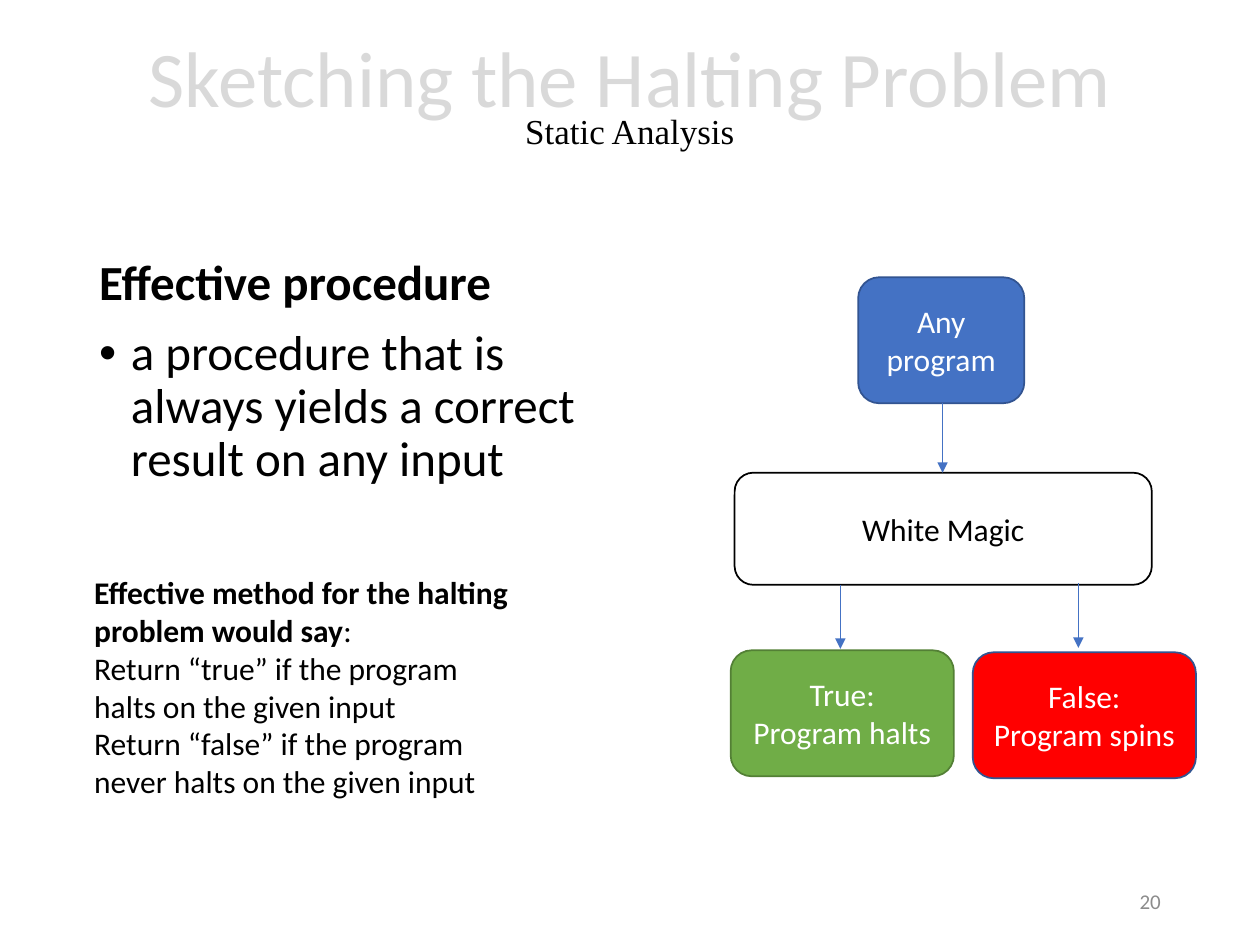
from dataclasses import dataclass

from lxml import etree
from pptx import Presentation
from pptx import util as u
from pptx.dml.color import RGBColor
from pptx.enum import shapes, text
from pptx.oxml import ns

BLACK = RGBColor(0x00, 0x00, 0x00)
WHITE = RGBColor(0xFF, 0xFF, 0xFF)
PALE_GREY = RGBColor(0xD9, 0xD9, 0xD9)
GREY = RGBColor(0x8C, 0x8C, 0x8C)
BLUE = RGBColor(0x44, 0x72, 0xC4)
DARK_BLUE = RGBColor(0x32, 0x54, 0x91)
GREEN = RGBColor(0x70, 0xAD, 0x47)
DARK_GREEN = RGBColor(0x53, 0x80, 0x35)
RED = RGBColor(0xFF, 0x00, 0x00)

LEFT, CENTER, RIGHT = text.PP_ALIGN.LEFT, text.PP_ALIGN.CENTER, text.PP_ALIGN.RIGHT
TOP, MIDDLE = text.MSO_ANCHOR.TOP, text.MSO_ANCHOR.MIDDLE


@dataclass(frozen=True)
class Span:
    words: str
    size: float = 18
    color: RGBColor = BLACK
    bold: bool = False
    font: str = "Calibri"


@dataclass(frozen=True)
class Area:
    left: float
    top: float
    width: float
    height: float

    def lengths(self) -> list[u.Length]:
        return [u.Cm(n) for n in (self.left, self.top, self.width, self.height)]


@dataclass(frozen=True)
class Node:
    area: Area
    lines: tuple[str, ...]
    fill: RGBColor
    outline: RGBColor
    ink: RGBColor = WHITE


@dataclass(frozen=True)
class Arrow:
    x: float
    start: float
    end: float


PROGRAM = Node(Area(17.3, 5.59, 3.35, 2.54), ("Any program",), BLUE, DARK_BLUE)
MAGIC = Node(Area(14.81, 9.53, 8.41, 2.26), ("White Magic",), WHITE, BLACK, BLACK)
HALTS = Node(Area(14.73, 13.11, 4.5, 2.54), ("True:", "Program halts"), GREEN, DARK_GREEN)
SPINS = Node(Area(19.61, 13.15, 4.5, 2.54), ("False:", "Program spins"), RED, DARK_BLUE)
NODES = (MAGIC, PROGRAM, HALTS, SPINS)

ARROWS = (
    Arrow(16.94, 11.79, 13.08),
    Arrow(21.74, 11.76, 13.06),
    Arrow(19.0, 8.13, 9.53),
)


def add_span(para, span: Span) -> None:
    run = para.add_run()
    run.text = span.words
    run.font.name = span.font
    run.font.size = u.Pt(span.size)
    run.font.bold = span.bold
    run.font.color.rgb = span.color


def write(frame, paragraphs: list[list[Span]], align=LEFT, anchor=TOP) -> list:
    frame.word_wrap = True
    frame.vertical_anchor = anchor
    paras = []
    for index, spans in enumerate(paragraphs):
        para = frame.add_paragraph() if index else frame.paragraphs[0]
        para.alignment = align
        for span in spans:
            add_span(para, span)
        paras.append(para)
    return paras


def add_text(page, area: Area, paragraphs: list[list[Span]], align=LEFT, anchor=TOP) -> list:
    box = page.shapes.add_textbox(*area.lengths())
    return write(box.text_frame, paragraphs, align, anchor)


def add_node(page, node: Node) -> None:
    box = page.shapes.add_shape(shapes.MSO_SHAPE.ROUNDED_RECTANGLE, *node.area.lengths())
    box.shadow.inherit = False
    box.fill.solid()
    box.fill.fore_color.rgb = node.fill
    box.line.color.rgb = node.outline
    box.line.width = u.Pt(1)
    write(box.text_frame, [[Span(line, color=node.ink)] for line in node.lines], CENTER, MIDDLE)


def add_arrow(page, arrow: Arrow) -> None:
    x = u.Cm(arrow.x)
    link = page.shapes.add_connector(
        shapes.MSO_CONNECTOR.STRAIGHT, x, u.Cm(arrow.start), x, u.Cm(arrow.end)
    )
    link.line.color.rgb = BLUE
    link.line.width = u.Pt(0.5)
    etree.SubElement(link.line._get_or_add_ln(), ns.qn("a:tailEnd"), type="triangle")
    etree.SubElement(link._element.spPr, ns.qn("a:effectLst"))


def add_bullet(para, indent: u.Length) -> None:
    properties = para._p.get_or_add_pPr()
    properties.set("marL", str(indent))
    properties.set("indent", str(-indent))
    etree.SubElement(properties, ns.qn("a:buFont"), typeface="Arial")
    etree.SubElement(properties, ns.qn("a:buChar"), char="•")


def add_title(page) -> None:
    heading = Span("Sketching the Halting Problem", 45, PALE_GREY)
    (para,) = add_text(page, Area(0, 0.23, 25.4, 3.68), [[heading]], CENTER, MIDDLE)
    para.line_spacing = 0.7
    para.add_line_break()
    add_span(para, Span("Static Analysis", 20, font="Times New Roman"))


def add_definition(page) -> None:
    paras = add_text(page, Area(1.75, 5.08, 11.43, 12.09), [
        [Span("Effective procedure", 28, bold=True)],
        [Span("a procedure that is always yields a correct result on any input", 28)],
    ])
    for para in paras:
        para.line_spacing = 0.9
        para.space_before = u.Pt(10)
    add_bullet(paras[1], u.Cm(0.64))


def main() -> None:
    deck = Presentation()
    deck.slide_width, deck.slide_height = u.Cm(25.4), u.Cm(19.05)
    page = deck.slides.add_slide(deck.slide_layouts[6])
    add_text(page, Area(17.93, 17.65, 5.72, 1.02), [[Span("20", 12, GREY)]], RIGHT, MIDDLE)
    add_title(page)
    add_text(page, Area(1.65, 11.43, 8.87, 4.88), [
        [Span("Effective method for the halting problem would say", bold=True), Span(":")],
        [Span("Return “true” if the program halts on the given input")],
        [Span("Return “false” if the program never halts on the given input")],
    ])
    for node in NODES:
        add_node(page, node)
    for arrow in ARROWS:
        add_arrow(page, arrow)
    add_definition(page)
    deck.save("out.pptx")


if __name__ == "__main__":
    main()
